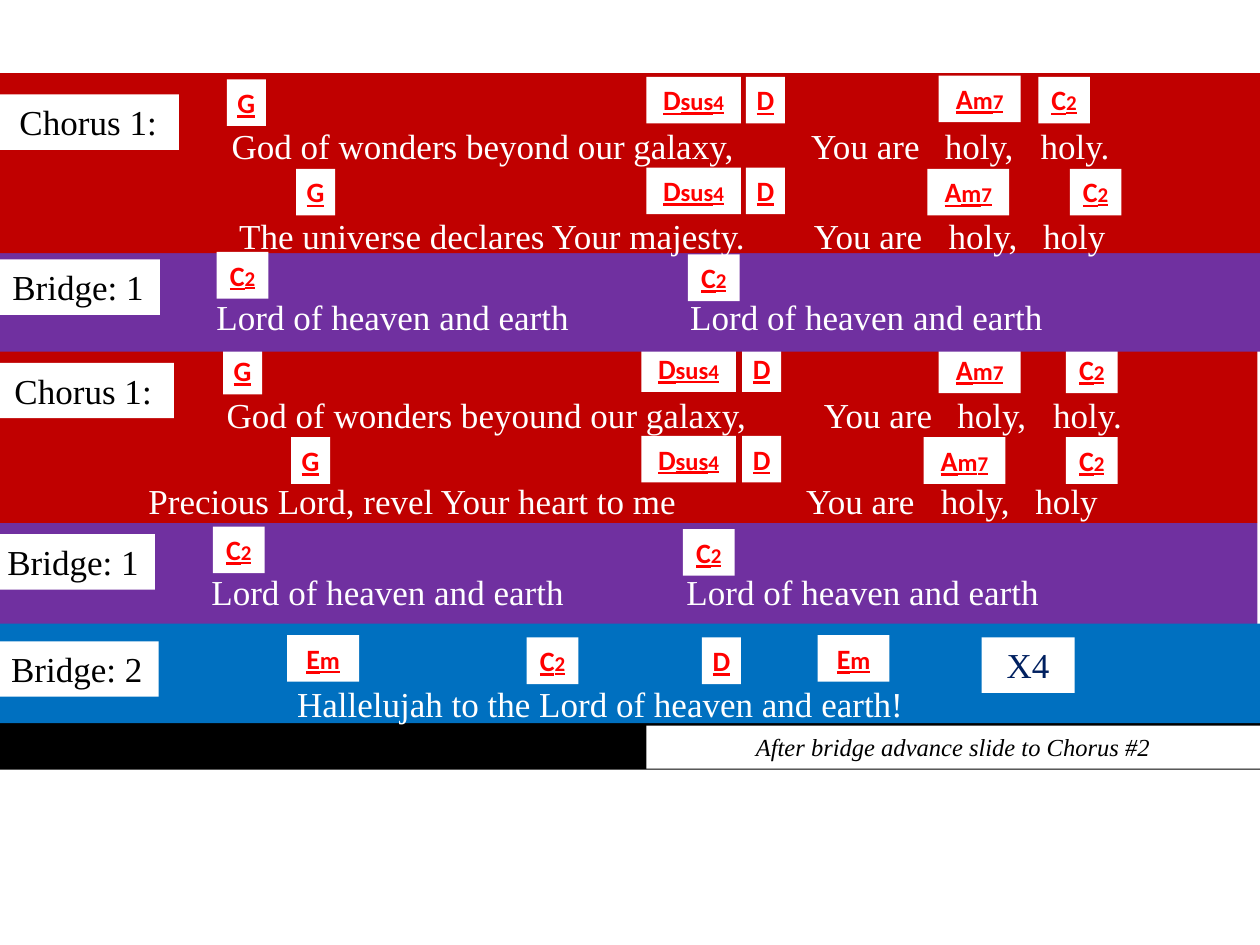
from dataclasses import dataclass
from itertools import groupby

from lxml.etree import SubElement
from pptx import Presentation
from pptx.dml.color import RGBColor
from pptx.enum.shapes import MSO_SHAPE as Shape
from pptx.enum.text import MSO_ANCHOR as Anchor, PP_ALIGN as Align
from pptx.oxml.ns import qn
from pptx.util import Inches, Pt

SLIDE_W, SLIDE_H = Inches(10), Inches(7.5)
COL, ROW = SLIDE_W / 100, SLIDE_H / 75
INSET = 1  # default text inset, in columns

WHITE, BLACK, CHORD_RED = "FFFFFF", "000000", "FF0000"
RED, PURPLE, BLUE, NAVY = "C00000", "7030A0", "0070C0", "002060"
SERIF, SANS = "Times New Roman", "Calibri"
TEXT_H, CHORD_H = 4.4, 3.7
CHORD_W = {"G": 3.1, "D": 3.1, "C2": 4.1, "Em": 5.7, "Am7": 6.5, "Dsus4": 7.5}


@dataclass
class Band:
    x: float
    y: float
    w: float
    h: float
    color: str


@dataclass
class Lyric:
    """A sung line; each phrase starts at its own column."""
    x: float
    y: float
    w: float
    phrases: list[tuple[float, str]]


@dataclass
class Label:
    x: float
    y: float
    w: float
    text: str
    color: str = BLACK
    h: float = TEXT_H
    size: int = 20
    italic: bool = False


@dataclass
class Chord:
    name: str
    x: float
    y: float


@dataclass
class Part:
    bands: list[Band]
    lyrics: list[Lyric]
    labels: list[Label]
    chords: list[Chord]


EARTH = "Lord of heaven and earth"

LOWER = Part(
    bands=[
        Band(-0.6, 41.5, 100.4, 8.2, PURPLE),
        Band(0, 57.1, 100.4, 4, BLACK),
        Band(0, 49.5, 100, 7.9, BLUE),
        Band(-0.3, 27.2, 100.1, 14.3, RED),
    ],
    lyrics=[
        Lyric(22.6, 53.7, 57.4, [(23.6, "Hallelujah to the Lord of heaven and earth!")]),
        Lyric(17, 30.7, 82.7, [(18, "God of wonders beyound our galaxy,"),
                               (65.4, "You are"), (76, "holy,"), (83.6, "holy.")]),
        Lyric(-1, 37.6, 105.4, [(11.8, "Precious Lord, revel Your heart to me"),
                                (64, "You are"), (74.7, "holy,"), (82.2, "holy")]),
        Lyric(-0.9, 44.8, 99.4, [(16.8, EARTH), (54.5, EARTH)]),
    ],
    labels=[
        Label(-0.6, 28.8, 14.4, "Chorus 1:"),
        Label(-0.7, 42.4, 13, "Bridge: 1"),
        Label(-0.4, 50.9, 13, "Bridge: 2"),
        Label(77.9, 50.6, 7.4, "X4", color=NAVY),
        Label(51.3, 57.6, 48.7, "After bridge advance slide to Chorus #2",
              h=3.4, size=14, italic=True),
    ],
    chords=[
        Chord("G", 17.7, 27.6), Chord("Dsus4", 50.9, 27.4), Chord("D", 58.9, 27.4),
        Chord("Am7", 74.5, 27.5), Chord("C2", 84.6, 27.5),
        Chord("G", 23.1, 34.7), Chord("Dsus4", 50.9, 34.6), Chord("D", 58.9, 34.6),
        Chord("Am7", 73.3, 34.7), Chord("C2", 84.6, 34.7),
        Chord("C2", 16.9, 41.8), Chord("C2", 54.2, 42),
        Chord("Em", 22.8, 50.4), Chord("C2", 41.8, 50.6),
        Chord("D", 55.7, 50.6), Chord("Em", 64.9, 50.4),
    ],
)

UPPER = Part(
    bands=[
        Band(-0.2, 19.7, 100.4, 8.2, PURPLE),
        Band(0, 5.8, 100.1, 14.3, RED),
    ],
    lyrics=[
        Lyric(17.4, 9.4, 82.7, [(18.4, "God of wonders beyond our galaxy,"),
                                (64.4, "You are"), (75, "holy,"), (82.6, "holy.")]),
        Lyric(17.4, 16.5, 87.5, [(19, "The universe declares Your majesty."),
                                 (64.6, "You are"), (75.3, "holy,"), (82.8, "holy")]),
        Lyric(-0.5, 23, 99.4, [(17.2, EARTH), (54.8, EARTH)]),
    ],
    labels=[
        Label(-0.2, 7.5, 14.4, "Chorus 1:"),
        Label(-0.3, 20.6, 13, "Bridge: 1"),
    ],
    chords=[
        Chord("G", 18, 6.3), Chord("Dsus4", 51.3, 6.1), Chord("D", 59.2, 6.1),
        Chord("Am7", 74.5, 6), Chord("C2", 82.4, 6.1),
        Chord("G", 23.5, 13.4), Chord("Dsus4", 51.3, 13.3), Chord("D", 59.2, 13.3),
        Chord("Am7", 73.6, 13.4), Chord("C2", 84.9, 13.4),
        Chord("C2", 17.2, 20), Chord("C2", 54.6, 20.2),
    ],
)


def rgb(color: str) -> RGBColor:
    return RGBColor.from_string(color)


def box(x: float, y: float, w: float, h: float) -> tuple[int, int, int, int]:
    return round(x * COL), round(y * ROW), round(w * COL), round(h * ROW)


def add_text(p, text: str, *, size=20, font=SERIF, color=BLACK,
             bold=False, italic=False, underline=False):
    r = p.add_run()
    r.text = text
    f = r.font
    f.size, f.name, f.color.rgb = Pt(size), font, rgb(color)
    f.bold, f.italic, f.underline = bold, italic, underline


def add_rect(s, x: float, y: float, w: float, h: float, color: str):
    sp = s.shapes.add_shape(Shape.RECTANGLE, *box(x, y, w, h))
    sp.shadow.inherit = False
    sp.fill.solid()
    sp.fill.fore_color.rgb = rgb(color)
    sp.line.fill.background()
    return sp


def add_tag(s, x: float, y: float, w: float, h: float):
    """Draw a white box and return its centred paragraph."""
    tf = add_rect(s, x, y, w, h, WHITE).text_frame
    tf.word_wrap = False
    tf.vertical_anchor = Anchor.TOP
    p = tf.paragraphs[0]
    p.alignment = Align.CENTER
    return p


def add_lyric(s, lyric: Lyric):
    tf = s.shapes.add_textbox(*box(lyric.x, lyric.y, lyric.w, TEXT_H)).text_frame
    tf.word_wrap = True
    p = tf.paragraphs[0]
    start = lyric.x + INSET
    stops = [x - start for x, _ in lyric.phrases if x - start > 0.1]
    if stops:
        tabs = SubElement(p._p.get_or_add_pPr(), qn("a:tabLst"))
        for stop in stops:
            SubElement(tabs, qn("a:tab"), pos=str(round(stop * COL)), algn="l")
    lead = "\t" if len(stops) == len(lyric.phrases) else ""
    add_text(p, lead + "\t".join(text for _, text in lyric.phrases), color=WHITE)


def add_label(s, label: Label):
    p = add_tag(s, label.x, label.y, label.w, label.h)
    add_text(p, label.text, size=label.size, color=label.color, italic=label.italic)


def add_chord(s, chord: Chord):
    """Draw a chord, its root largest and its digits smallest."""
    p = add_tag(s, chord.x, chord.y, CHORD_W[chord.name], CHORD_H)
    pieces = [(chord.name[0], 16)]
    for is_digit, chars in groupby(chord.name[1:], str.isdigit):
        pieces.append(("".join(chars), 12 if is_digit else 14))
    for text, size in pieces:
        add_text(p, text, size=size, font=SANS, color=CHORD_RED,
                 bold=True, underline=True)


def add_part(s, part: Part):
    for b in part.bands:
        add_rect(s, b.x, b.y, b.w, b.h, b.color)
    for lyric in part.lyrics:
        add_lyric(s, lyric)
    for label in part.labels:
        add_label(s, label)
    for chord in part.chords:
        add_chord(s, chord)


def main():
    prs = Presentation()
    prs.slide_width, prs.slide_height = SLIDE_W, SLIDE_H
    s = prs.slides.add_slide(prs.slide_layouts[6])
    for part in (LOWER, UPPER):
        add_part(s, part)
    prs.save("out.pptx")


if __name__ == "__main__":
    main()
